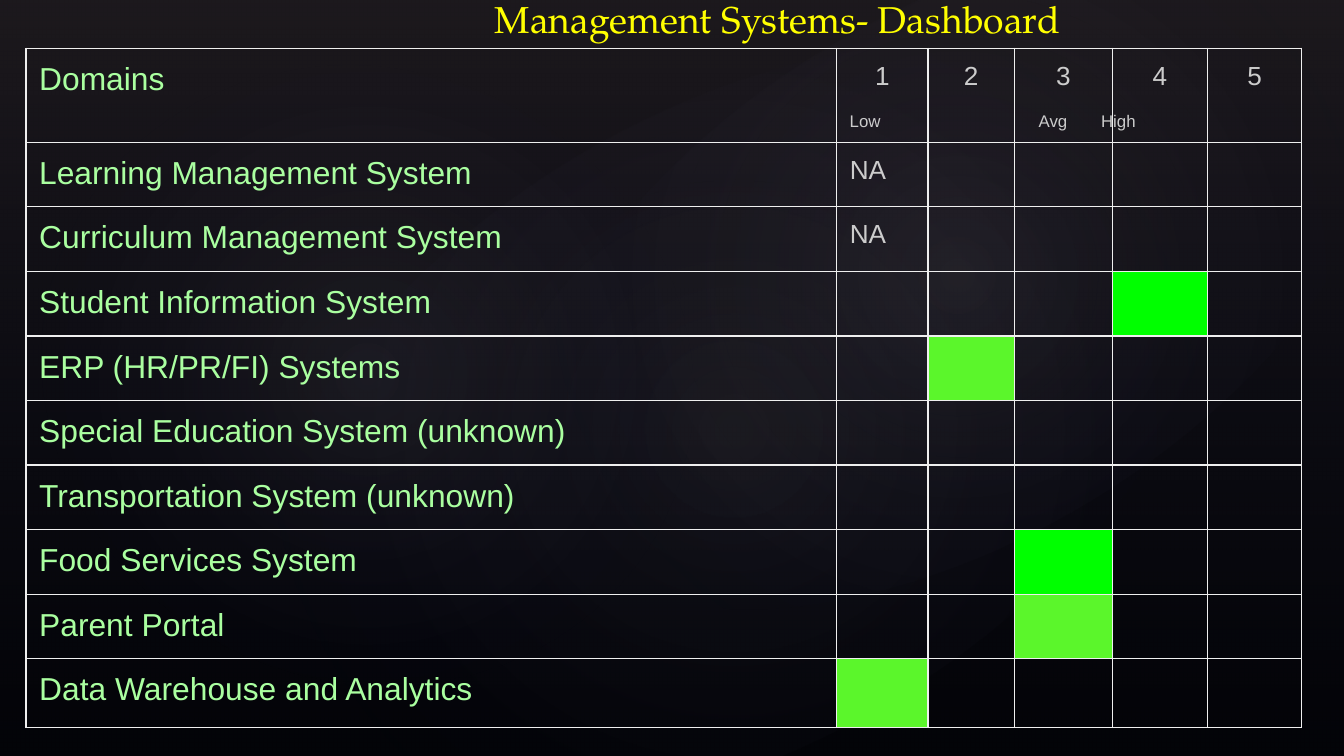
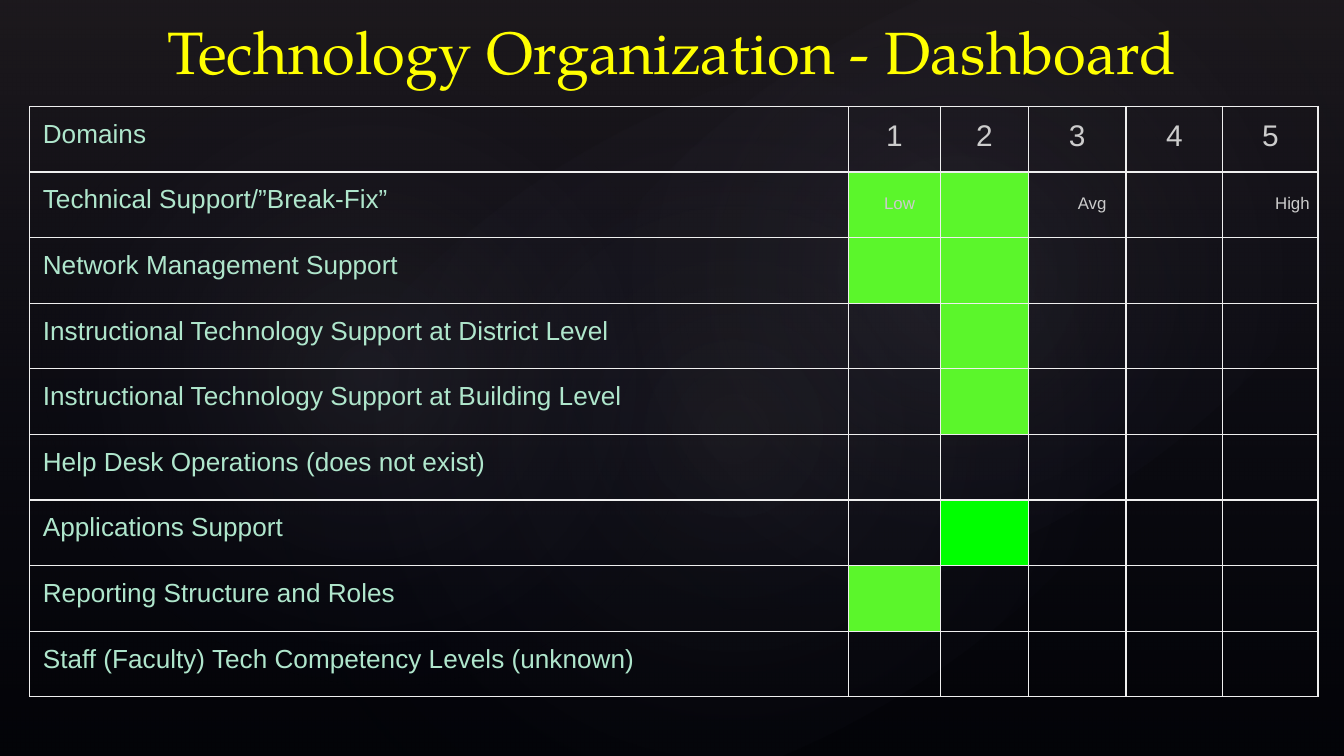
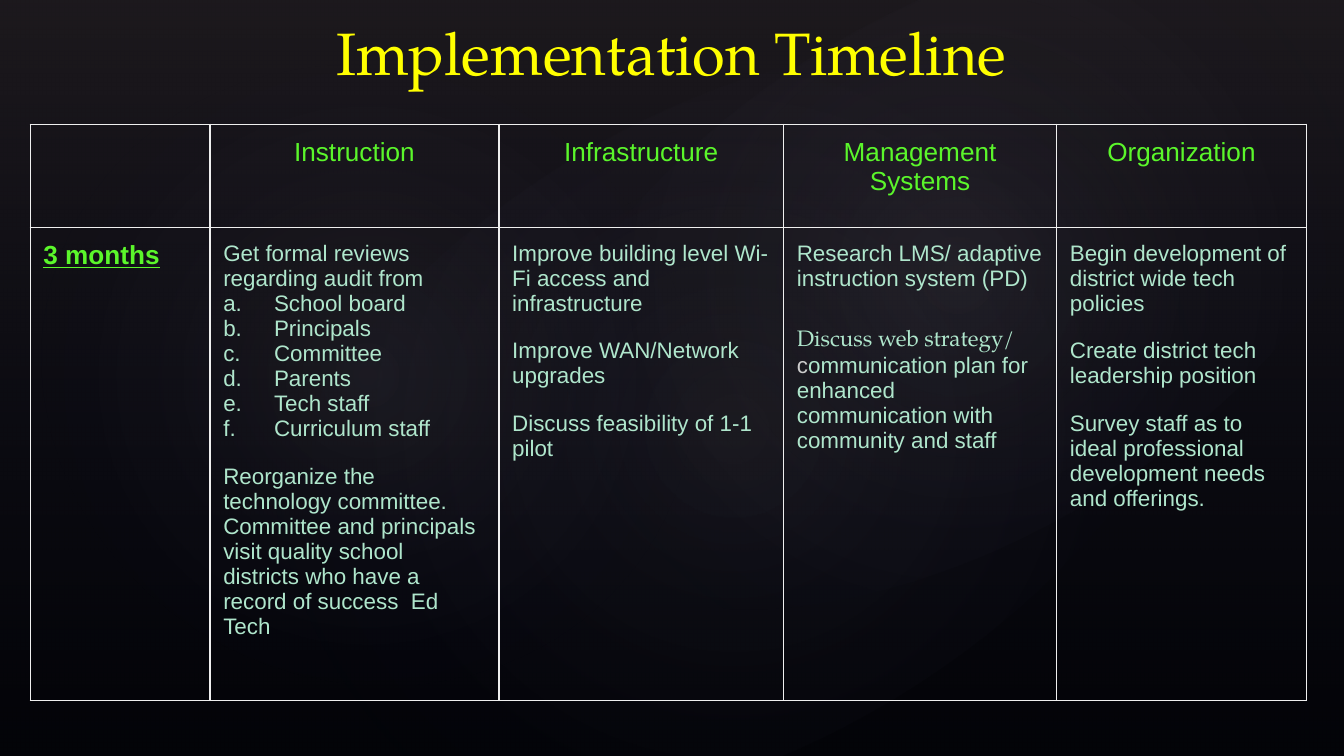
"""Build three audit slides: two rating dashboards and a timeline."""
from dataclasses import dataclass

from pptx import Presentation
from pptx.dml.color import RGBColor
from pptx.enum.shapes import MSO_SHAPE as Preset
from pptx.enum.text import MSO_ANCHOR as Anchor, MSO_AUTO_SIZE as AutoSize, PP_ALIGN as Align
from pptx.oxml import parse_xml
from pptx.oxml.ns import nsdecls
from pptx.util import Cm, Pt

BODY_FONT, TITLE_FONT = "Arial", "TeX Gyre Pagella"
BLACK, YELLOW, GREY, BORDER = "000000", "FFFF00", "CCCCCC", "EFEFEF"
MINT, PALE_GREEN, LIME, GREEN = "AFE6CC", "AAFFA0", "5BF62B", "00FF00"
WIDTH, HEIGHT = 25.4, 14.29
INSET = 0.25


@dataclass(frozen=True)
class Box:
    left: float
    top: float
    width: float
    height: float

    def lengths(self) -> tuple:
        return Cm(self.left), Cm(self.top), Cm(self.width), Cm(self.height)


@dataclass(frozen=True)
class Style:
    size: int
    color: str
    font: str = BODY_FONT
    align: Align = Align.LEFT
    strong: bool = False


@dataclass(frozen=True)
class Piece:
    text: str
    style: Style
    break_after: bool = False


@dataclass(frozen=True)
class Line:
    pieces: tuple
    gap: int = 0
    lettered: bool = False


@dataclass(frozen=True)
class Glow:
    box: Box
    rotation: float
    opacity: int


@dataclass(frozen=True)
class Scale:
    box: Box
    left_inset: float
    top_inset: float
    tabs: tuple


@dataclass(frozen=True)
class Dashboard:
    title: str
    title_box: Box
    title_size: int
    title_indent: tuple
    left: float
    top: float
    columns: tuple
    rows: tuple
    domains: tuple
    domain_style: Style
    number_size: int
    notes: dict
    marks: dict
    scale: Scale


GLOWS = (
    Glow(Box(3.81, 2.16, 20.12, 11.89), 328.7, 7),
    Glow(Box(1.17, 0.86, 11.53, 12.45), 294.3, 8),
    Glow(Box(9.09, 0.25, 18.01, 9.91), 328.7, 8),
)

DASHBOARDS = (
    Dashboard(
        "Management Systems- Dashboard", Box(0.18, -0.33, 25.22, 1.35), 20, (2.54, 1.27),
        0.49, 0.91, (15.32, 1.73, 1.63, 1.85, 1.8, 1.78), (1.78, *[1.22] * 8, 1.3),
        ("Learning Management System", "Curriculum Management System",
         "Student Information System", "ERP (HR/PR/FI) Systems",
         "Special Education System (unknown)", "Transportation System (unknown)",
         "Food Services System", "Parent Portal", "Data Warehouse and Analytics"),
        Style(17, PALE_GREEN), 14, {(1, 1): "NA", (2, 1): "NA"},
        {(3, 4): GREEN, (4, 2): LIME, (7, 3): GREEN, (8, 3): LIME, (9, 1): LIME},
        Scale(Box(14.86, 1.83, 9.75, 0.66), 1.2, 0.41, (3.57, 4.75)),
    ),
    Dashboard(
        "Technology Organization - Dashboard", Box(0, 0.13, 25.4, 1.75), 32, (0, 0),
        0.56, 2.01, (15.47, 1.75, 1.65, 1.85, 1.83, 1.8), (1.24,) * 9,
        ("Technical Support/”Break-Fix”", "Network Management Support",
         "Instructional Technology Support at District Level",
         "Instructional Technology Support at Building Level",
         "Help Desk Operations (does not exist)", "Applications Support",
         "Reporting Structure and Roles", "Staff (Faculty) Tech Competency Levels (unknown)"),
        Style(14, MINT), 16, {},
        {(1, 1): LIME, (1, 2): LIME, (2, 1): LIME, (2, 2): LIME, (3, 2): LIME,
         (4, 2): LIME, (6, 2): GREEN, (7, 1): LIME},
        Scale(Box(16.46, 3.45, 8.97, 0.66), INSET, INSET, (3.66, 7.39)),
    ),
)

HEADING = Style(14, LIME, align=Align.CENTER)
PERIOD = Style(14, LIME, strong=True)
NOTE = Style(12, MINT)


def plain(text: str, style: Style = NOTE, gap: int = 0, lettered: bool = False) -> Line:
    """Return a line made of one piece."""
    return Line((Piece(text, style),), gap, lettered)


def spaced(*texts: str) -> tuple:
    """Return notes with one open line between them."""
    return tuple(plain(text, gap=12 if index else 0) for index, text in enumerate(texts))


REVIEWERS = ("School board", "Principals", "Committee", "Parents", "Tech staff", "Curriculum staff")
TIMELINE = {
    "Instruction": (
        plain("Get formal reviews regarding audit from"),
        *(plain(reviewer, lettered=True) for reviewer in REVIEWERS),
        plain("Reorganize the technology committee. Committee and principals visit quality "
              "school districts who have a record of success  Ed Tech", gap=12),
    ),
    "Infrastructure": spaced(
        "Improve building level Wi-Fi access and infrastructure",
        "Improve WAN/Network upgrades", "Discuss feasibility of 1-1 pilot"),
    "Management Systems": (
        plain("Research LMS/ adaptive instruction system (PD)"),
        Line((Piece("Discuss web strategy/", Style(12, MINT, TITLE_FONT), True),
              Piece("c", Style(12, GREY)),
              Piece("ommunication plan for enhanced communication with community and staff", NOTE)),
             gap=21),
    ),
    "Organization": spaced(
        "Begin development of district wide tech policies",
        "Create district tech leadership position",
        "Survey staff as to ideal professional development needs and offerings."),
}


def rgb(color: str) -> RGBColor:
    """Return the colour of a hex string."""
    return RGBColor.from_string(color)


def format_run(run, style: Style) -> None:
    """Give a run its font, size and colour."""
    run.font.name = style.font
    run.font.size = Pt(style.size)
    run.font.color.rgb = rgb(style.color)
    run.font.bold = style.strong
    run.font.underline = style.strong


def write_lines(text_frame, lines: tuple) -> None:
    """Write one paragraph for each line."""
    for index, line in enumerate(lines):
        paragraph = text_frame.add_paragraph() if index else text_frame.paragraphs[0]
        paragraph.alignment = line.pieces[0].style.align
        paragraph.space_before = Pt(line.gap)
        for piece in line.pieces:
            run = paragraph.add_run()
            run.text = piece.text
            format_run(run, piece.style)
            if piece.break_after:
                paragraph.add_line_break()
        if line.lettered:
            properties = indent(paragraph, 0.96, -0.96)
            properties.append(parse_xml(
                f'<a:buFont {nsdecls("a")} typeface="{BODY_FONT}"/>'))
            properties.append(parse_xml(
                f'<a:buAutoNum {nsdecls("a")} type="alphaLcPeriod"/>'))


def indent(paragraph, margin: float, first: float):
    """Set the indents of a paragraph and return its properties."""
    properties = paragraph._p.get_or_add_pPr()
    properties.set("marL", str(Cm(margin)))
    properties.set("indent", str(Cm(first)))
    return properties


def set_insets(target, left: float = INSET, top: float = INSET) -> None:
    """Set the inner margins of a cell or text frame."""
    target.margin_left, target.margin_top = Cm(left), Cm(top)
    target.margin_right = target.margin_bottom = Cm(INSET)


def gradient(stops: tuple, direction: str):
    """Return a gradient fill from (position, colour, opacity) stops."""
    marks = "".join(
        f'<a:gs pos="{position * 1000}"><a:srgbClr val="{color}">'
        f'<a:alpha val="{opacity * 1000}"/></a:srgbClr></a:gs>'
        for position, color, opacity in stops)
    return parse_xml(f'<a:gradFill {nsdecls("a")} rotWithShape="1">'
                     f'<a:gsLst>{marks}</a:gsLst>{direction}</a:gradFill>')


def add_backdrop(slide, master) -> None:
    """Draw the dark backdrop and its glows behind every slide."""
    master.background.fill.solid()
    master.background.fill.fore_color.rgb = rgb(BLACK)
    downward = '<a:lin ang="5400000" scaled="0"/>'
    radial = ('<a:path path="circle">'
              '<a:fillToRect l="50000" t="50000" r="50000" b="50000"/></a:path>')
    veil = gradient(((0, "504652", 36), (100, "242852", 10)), downward)
    layers = [(Preset.RECTANGLE, Box(0, 0, WIDTH, HEIGHT), 0, veil)]
    for glow in GLOWS:
        fill = gradient(((0, "C4BCC6", glow.opacity), (58, "242852", 0)), radial)
        layers.append((Preset.OVAL, glow.box, glow.rotation, fill))
    for index, (preset, box, rotation, fill) in enumerate(layers):
        shape = slide.shapes.add_shape(preset, *box.lengths())
        shape.rotation = rotation
        shape.line.fill.background()
        shape.shadow.inherit = False
        shape.element.spPr.insert(2, fill)
        shape.element.nvSpPr.cNvPr.id = 20 + index
        master.shapes.element.insert(2 + index, shape.element)


def set_title(slide, text: str, box: Box, size: int, indents: tuple = (0, 0)) -> None:
    """Place and format the title placeholder."""
    title = slide.shapes.title
    title.left, title.top, title.width, title.height = box.lengths()
    frame = title.text_frame
    frame.auto_size = AutoSize.NONE
    frame.word_wrap = True
    frame.vertical_anchor = Anchor.BOTTOM
    set_insets(frame)
    write_lines(frame, (plain(text, Style(size, YELLOW, TITLE_FONT, Align.CENTER)),))
    indent(frame.paragraphs[0], *indents)


def set_borders(cell) -> None:
    """Draw a thin light line on each side of a cell."""
    properties = cell._tc.get_or_add_tcPr()
    for index, side in enumerate(("lnL", "lnR", "lnT", "lnB")):
        properties.insert(index, parse_xml(
            f'<a:{side} {nsdecls("a")} w="{Pt(0.75)}"><a:solidFill>'
            f'<a:srgbClr val="{BORDER}"/></a:solidFill></a:{side}>'))


def add_grid(slide, left: float, top: float, columns: tuple, rows: tuple,
             contents: dict, marks: dict) -> None:
    """Add a bordered table with lines and fills by (row, column)."""
    box = Box(left, top, sum(columns), sum(rows))
    table = slide.shapes.add_table(len(rows), len(columns), *box.lengths()).table
    table.first_row = table.horz_banding = False
    for column, width in zip(table.columns, columns):
        column.width = Cm(width)
    for row_index, height in enumerate(rows):
        table.rows[row_index].height = Cm(height)
        for column_index in range(len(columns)):
            place = (row_index, column_index)
            cell = table.cell(*place)
            if place in marks:
                cell.fill.solid()
                cell.fill.fore_color.rgb = rgb(marks[place])
            else:
                cell.fill.background()
            set_borders(cell)
            if place in contents:
                set_insets(cell)
                write_lines(cell.text_frame, contents[place])


def add_scale(slide, scale: Scale) -> None:
    """Add the low, average and high labels on tab stops."""
    frame = slide.shapes.add_textbox(*scale.box.lengths()).text_frame
    frame.word_wrap = True
    set_insets(frame, scale.left_inset, scale.top_inset)
    write_lines(frame, (plain("Low\tAvg\tHigh", Style(9, GREY)),))
    stops = "".join(f'<a:tab pos="{Cm(tab)}" algn="l"/>' for tab in scale.tabs)
    frame.paragraphs[0]._p.get_or_add_pPr().append(
        parse_xml(f'<a:tabLst {nsdecls("a")}>{stops}</a:tabLst>'))


def build_dashboard(slide, board: Dashboard) -> None:
    """Fill a slide with a rating dashboard."""
    set_title(slide, board.title, board.title_box, board.title_size, board.title_indent)
    number = Style(board.number_size, GREY, align=Align.CENTER)
    contents = {(row, 0): (plain(domain, board.domain_style),)
                for row, domain in enumerate(("Domains", *board.domains))}
    contents.update({(0, rating): (plain(str(rating), number),) for rating in range(1, 6)})
    contents.update({place: (plain(note, Style(14, GREY)),)
                     for place, note in board.notes.items()})
    add_grid(slide, board.left, board.top, board.columns, board.rows, contents, board.marks)
    add_scale(slide, board.scale)


def build_timeline(slide) -> None:
    """Fill a slide with the implementation timeline."""
    set_title(slide, "Implementation Timeline", Box(1.27, -0.48, 22.86, 2.39), 32)
    contents = {(1, 0): (plain("3 months", PERIOD),)}
    for column, (heading, notes) in enumerate(TIMELINE.items(), start=1):
        contents[0, column] = (plain(heading, HEADING),)
        contents[1, column] = notes
    add_grid(slide, 0.57, 2.35, (3.4, 5.46, 5.38, 5.16, 4.72), (1.95, 8.94), contents, {})


def main() -> None:
    """Build and save the presentation."""
    presentation = Presentation()
    presentation.slide_width, presentation.slide_height = Cm(WIDTH), Cm(HEIGHT)
    layout = presentation.slide_layouts[5]
    slides = [presentation.slides.add_slide(layout) for _ in range(len(DASHBOARDS) + 1)]
    add_backdrop(slides[0], presentation.slide_master)
    for slide, board in zip(slides, DASHBOARDS):
        build_dashboard(slide, board)
    build_timeline(slides[-1])
    presentation.save("out.pptx")


if __name__ == "__main__":
    main()
